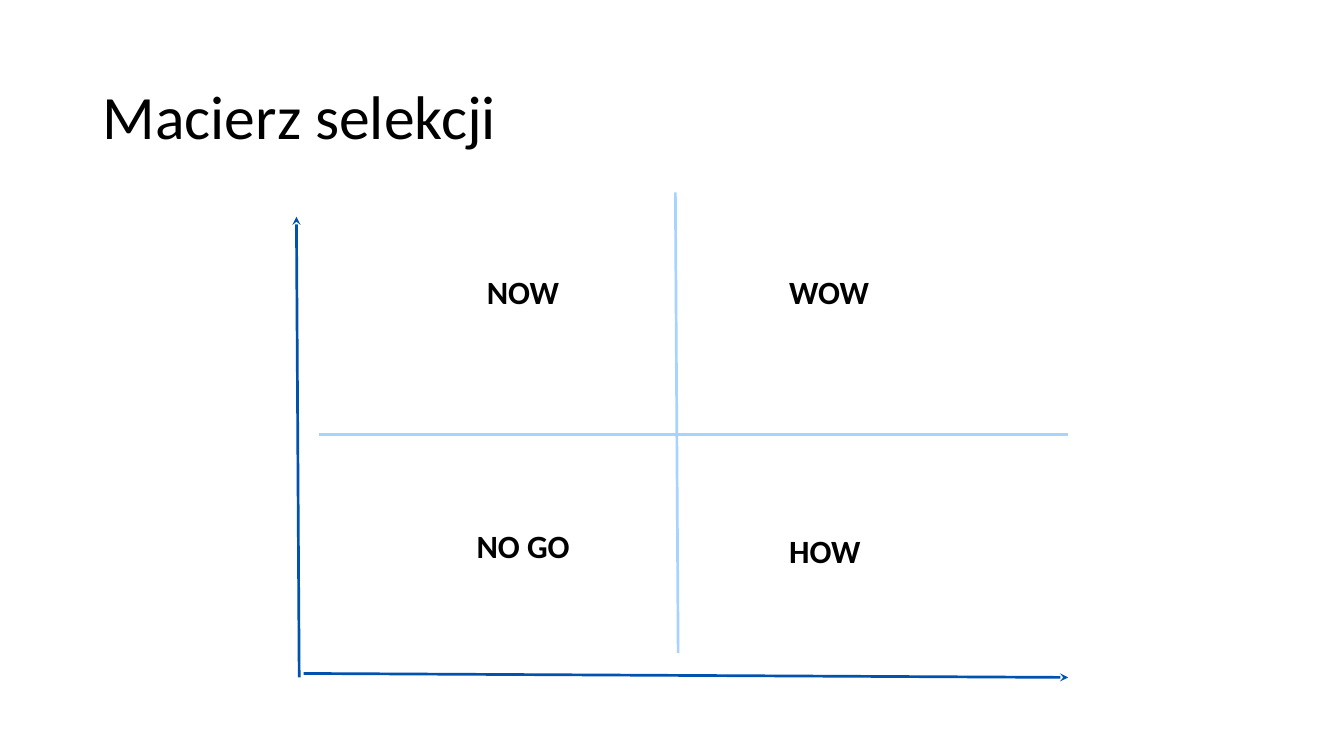
from pptx import Presentation
from pptx.dml.color import RGBColor
from pptx.enum.shapes import MSO_CONNECTOR
from pptx.enum.text import MSO_ANCHOR, MSO_AUTO_SIZE
from pptx.oxml.ns import qn
from pptx.util import Cm, Pt
from lxml.etree import SubElement

BLACK = RGBColor(0x00, 0x00, 0x00)
NAVY = RGBColor(0x00, 0x52, 0xAF)
SKY = RGBColor(0xA6, 0xD3, 0xFF)

TITLE = {
    "box": {"vertical_anchor": MSO_ANCHOR.MIDDLE,
            "margin_left": Cm(0.25), "margin_right": Cm(0.25),
            "margin_top": Cm(0.13), "margin_bottom": Cm(0.13)},
    "para": {"line_spacing": 0.9},
    "font": {"size": Pt(44), "bold": False},
}
LABEL = {
    "box": {"vertical_anchor": MSO_ANCHOR.TOP,
            "auto_size": MSO_AUTO_SIZE.SHAPE_TO_FIT_TEXT,
            "margin_left": Cm(0.33), "margin_right": Cm(0.33),
            "margin_top": Cm(0.33), "margin_bottom": Cm(0.33)},
    "para": {},
    "font": {"size": Pt(23.2), "bold": True},
}

# text, left, top
FIELDS = [
    ("WOW", 19.56, 6.53),
    ("NOW", 11.94, 6.53),
    ("NO GO", 11.68, 12.93),
    ("HOW", 19.56, 13.06),
]
# start x, start y, end x, end y
SPLITS = [(8.05, 10.95, 26.92, 10.95), (17.02, 4.85, 17.09, 16.46)]
AXES = [(7.47, 5.46, 7.54, 17.07), (26.92, 17.07, 7.65, 16.97)]


def apply(item, values):
    for name, value in values.items():
        setattr(item, name, value)


def add_text(slide, text, area, style):
    frame = slide.shapes.add_textbox(*map(Cm, area)).text_frame
    frame.word_wrap = True
    apply(frame, style["box"])
    para = frame.paragraphs[0]
    apply(para, style["para"])
    run = para.add_run()
    run.text = text
    apply(run.font, {"name": "Calibri", **style["font"]})
    run.font.color.rgb = BLACK


def add_line(slide, ends, color, arrow=False):
    """Draw a line between two points; an arrow points at the first one."""
    link = slide.shapes.add_connector(MSO_CONNECTOR.STRAIGHT, *map(Cm, ends))
    link.line.color.rgb = color
    link.line.width = Pt(1.94)
    props = link.line.color and link._element.spPr
    if arrow:
        SubElement(props.find(qn("a:ln")), qn("a:headEnd"), type="stealth")
    SubElement(props, qn("a:effectLst"))


def main():
    deck = Presentation()
    apply(deck, {"slide_width": Cm(33.87), "slide_height": Cm(19.05)})
    slide = deck.slides.add_slide(deck.slide_layouts[6])
    add_text(slide, "Macierz selekcji", (2.34, 1.17, 29.21, 3.68), TITLE)
    for text, left, top in FIELDS:
        add_text(slide, text, (left, top, 4.55, 1.65), LABEL)
    for ends in SPLITS:
        add_line(slide, ends, SKY)
    for ends in AXES:
        add_line(slide, ends, NAVY, arrow=True)
    deck.save("out.pptx")


if __name__ == "__main__":
    main()
